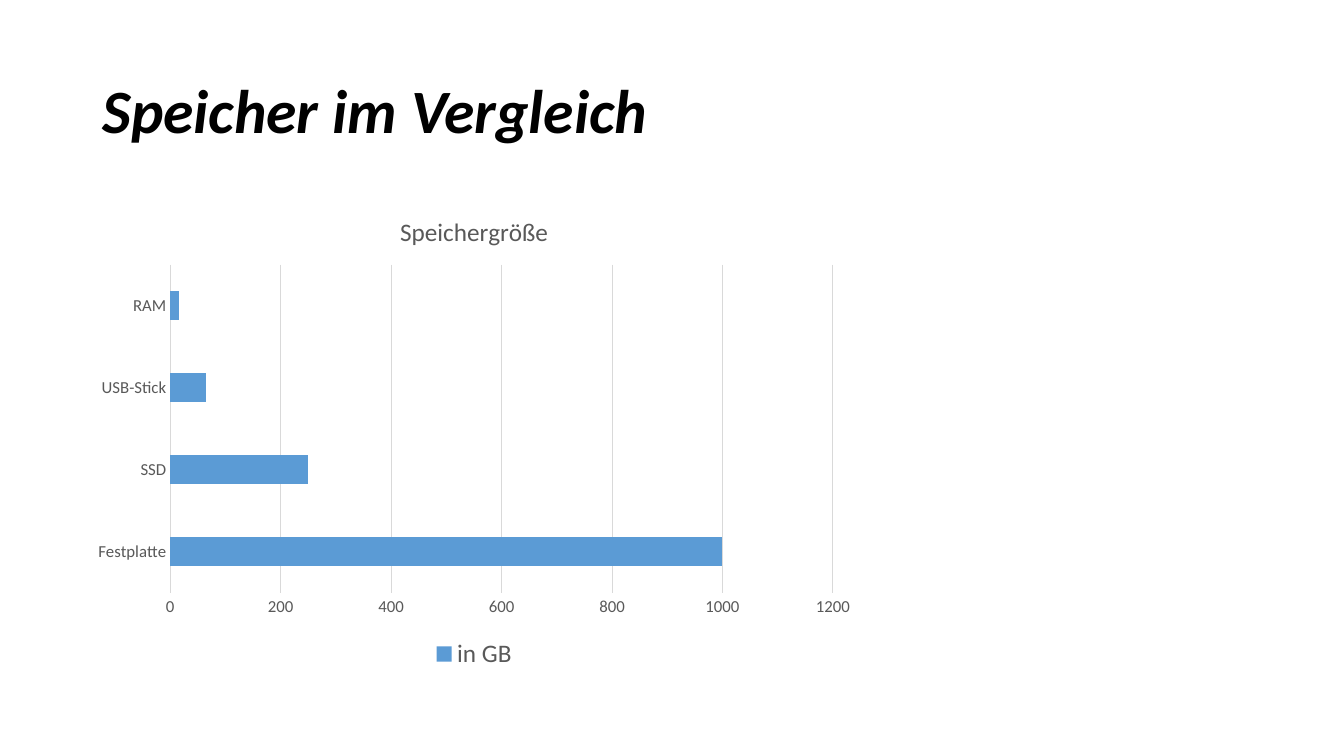
"""Build a slide comparing storage sizes in a bar chart."""
from pptx import Presentation
from pptx.chart.data import CategoryChartData
from pptx.dml.color import RGBColor
from pptx.enum.chart import XL_CHART_TYPE as ChartType, XL_LEGEND_POSITION as LegendPos
from pptx.enum.chart import XL_TICK_MARK as Tick
from pptx.enum.text import MSO_ANCHOR as Anchor, PP_ALIGN as Align
from pptx.util import Pt

TITLE = "Speicher im Vergleich"
CHART_TITLE = "Speichergröße"
SERIES = "in GB"
SIZES = {"Festplatte": 1000, "SSD": 250, "USB-Stick": 64, "RAM": 16}
COLORS = {"title": "000000", "text": "595959", "line": "D9D9D9", "bar": "5B9BD5"}
FONT = "Calibri"
TITLE_BOX = (66, 28.75, 828, 104.4)
CHART_BOX = (59, 139, 559.4, 342.7)


def rgb(name):
    return RGBColor.from_string(COLORS[name])


def style(font, size, color="text", bold=False, italic=False):
    font.name, font.size = FONT, Pt(size)
    font.bold, font.italic = bold, italic
    font.color.rgb = rgb(color)


def style_line(line):
    line.color.rgb = rgb("line")
    line.width = Pt(0.75)


def add_title(s):
    sp = s.shapes.title
    sp.left, sp.top, sp.width, sp.height = map(Pt, TITLE_BOX)
    tf = sp.text_frame
    tf.text = TITLE
    tf.vertical_anchor = Anchor.MIDDLE
    p = tf.paragraphs[0]
    p.alignment = Align.LEFT
    p.line_spacing = 0.9
    style(p.font, 44, "title", bold=True, italic=True)


def add_size_chart(s):
    data = CategoryChartData()
    data.categories = list(SIZES)
    data.add_series(SERIES, list(SIZES.values()))
    chart = s.shapes.add_chart(ChartType.BAR_CLUSTERED, *map(Pt, CHART_BOX), data).chart
    style(chart.font, 10, "title")

    chart.has_title = True
    tf = chart.chart_title.text_frame
    tf.text = CHART_TITLE
    style(tf.paragraphs[0].font, 18)
    chart.chart_title.include_in_layout = False

    chart.has_legend = True
    chart.legend.position = LegendPos.BOTTOM
    chart.legend.include_in_layout = False
    style(chart.legend.font, 18)

    plot = chart.plots[0]
    plot.gap_width = 182
    plot.vary_by_categories = False
    fill = plot.series[0].format.fill
    fill.solid()
    fill.fore_color.rgb = rgb("bar")

    cat, val = chart.category_axis, chart.value_axis
    for axis in (cat, val):
        axis.major_tick_mark = axis.minor_tick_mark = Tick.NONE
        style(axis.tick_labels.font, 12)
    style_line(cat.format.line)
    val.format.line.fill.background()
    val.has_major_gridlines = True
    style_line(val.major_gridlines.format.line)
    val.minimum_scale, val.maximum_scale, val.major_unit = 0, 1200, 200


def main():
    prs = Presentation()
    prs.slide_width, prs.slide_height = Pt(960), Pt(540)
    s = prs.slides.add_slide(prs.slide_layouts[5])
    add_title(s)
    add_size_chart(s)
    prs.save("out.pptx")


if __name__ == "__main__":
    main()
